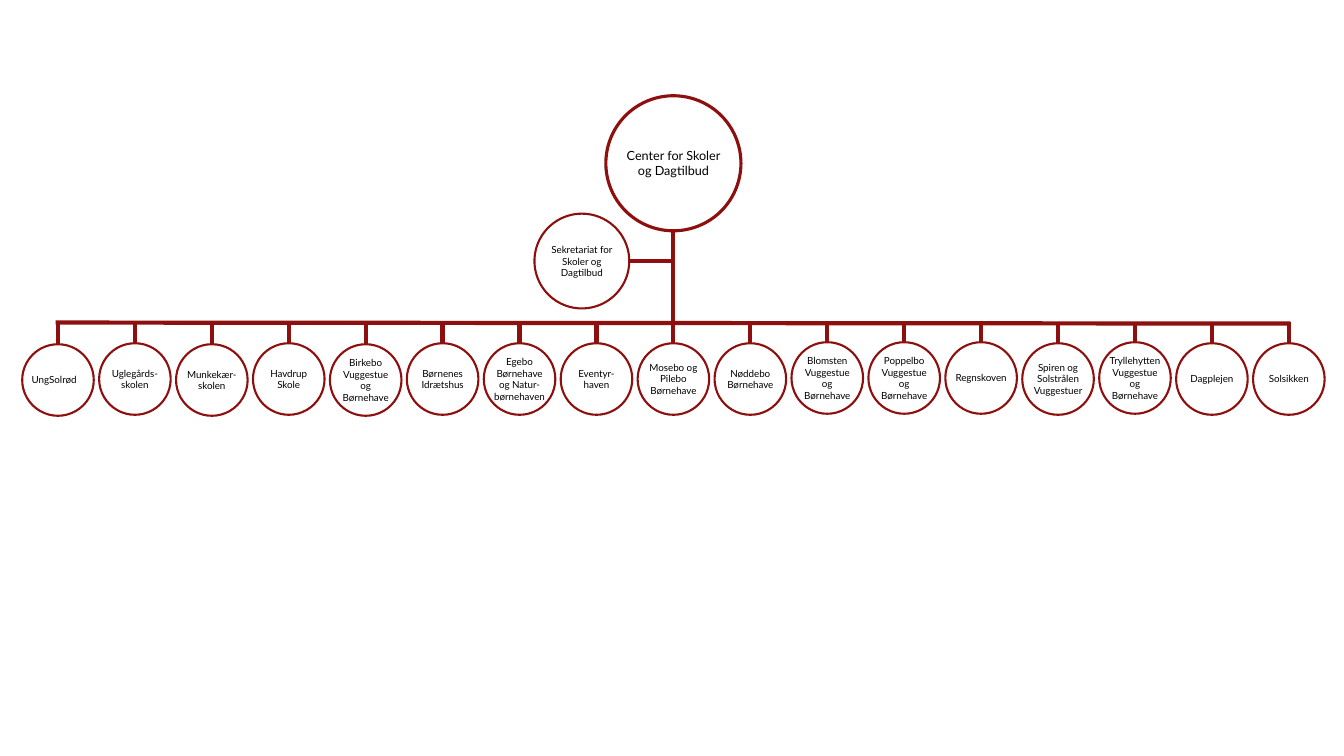
from lxml import etree
from pptx import Presentation
from pptx import util as u
from pptx.dml.color import RGBColor
from pptx.enum import shapes, text
from pptx.oxml import ns

RED = RGBColor(0x8D, 0x0F, 0x0E)
WHITE = RGBColor(0xFF, 0xFF, 0xFF)
BLACK = RGBColor(0x00, 0x00, 0x00)

CENTER_COLUMN = 8
SECRETARIAT_COLUMN = 6.81
SECRETARIAT_ROW = 25.9
BUS_ROW = 32
STEM_TOP_ROW = 31.9
UNIT_SIZE = 7.1

# name, centre row, lines of text
UNITS = [
    ("UngSolrød", 37.7, 1),
    ("Uglegårds-skolen", 37.6, 2),
    ("Munkekær-skolen", 37.7, 2),
    ("Havdrup Skole", 37.6, 2),
    ("Birkebo Vuggestue og Børnehave", 37.7, 4),
    ("Børnenes Idrætshus", 37.6, 2),
    ("Egebo Børnehave og Natur-børnehaven", 37.6, 4),
    ("Eventyr-haven", 37.6, 2),
    ("Mosebo og Pilebo Børnehave", 37.6, 3),
    ("Nøddebo Børnehave", 37.6, 2),
    ("Blomsten Vuggestue og Børnehave", 37.5, 4),
    ("Poppelbo Vuggestue og Børnehave", 37.5, 4),
    ("Regnskoven", 37.5, 1),
    ("Spiren og Solstrålen Vuggestuer", 37.6, 3),
    ("Tryllehytten Vuggestue og Børnehave", 37.5, 4),
    ("Dagplejen", 37.6, 1),
    ("Solsikken", 37.6, 1),
]


class Chart:
    """Draws organisation chart elements on a grid of columns and rows."""

    font = "Lato"
    first_column = u.Inches(0.575)
    column = u.Inches(0.763)
    row = u.Inches(0.1)

    def __init__(self, slide):
        self.slide = slide

    def x(self, column):
        return round(self.first_column + column * self.column)

    def y(self, row):
        return round(row * self.row)

    def line(self, start, end):
        connector = self.slide.shapes.add_connector(
            shapes.MSO_CONNECTOR.STRAIGHT,
            self.x(start[0]), self.y(start[1]), self.x(end[0]), self.y(end[1]))
        connector.line.color.rgb = RED
        connector.line.width = u.Pt(3)
        etree.SubElement(connector._element.spPr, ns.qn("a:effectLst"))

    def circle(self, column, row, size, weight=1.5):
        side = self.y(size)
        shape = self.slide.shapes.add_shape(
            shapes.MSO_SHAPE.OVAL,
            self.x(column) - side // 2, self.y(row) - side // 2, side, side)
        shape.shadow.inherit = False
        shape.fill.solid()
        shape.fill.fore_color.rgb = WHITE
        shape.line.color.rgb = RED
        shape.line.width = u.Pt(weight)

    def label(self, column, row, words, lines, columns=0.74, size=7):
        width = round(columns * self.column)
        height = u.Pt(lines * size * 1.2)
        box = self.slide.shapes.add_textbox(
            self.x(column) - width // 2, self.y(row) - height // 2, width, height)
        frame = box.text_frame
        frame.word_wrap = True
        frame.vertical_anchor = text.MSO_ANCHOR.MIDDLE
        frame.margin_left = frame.margin_right = 0
        frame.margin_top = frame.margin_bottom = 0
        paragraph = frame.paragraphs[0]
        paragraph.alignment = text.PP_ALIGN.CENTER
        run = paragraph.add_run()
        run.text = words
        run.font.name = self.font
        run.font.size = u.Pt(size)
        run.font.color.rgb = BLACK


def main():
    presentation = Presentation()
    presentation.slide_width = u.Inches(13.33)
    presentation.slide_height = u.Inches(7.5)
    chart = Chart(presentation.slides.add_slide(presentation.slide_layouts[6]))

    chart.line((7.43, SECRETARIAT_ROW), (CENTER_COLUMN, SECRETARIAT_ROW))
    chart.circle(SECRETARIAT_COLUMN, SECRETARIAT_ROW, 9.4)
    chart.label(SECRETARIAT_COLUMN, SECRETARIAT_ROW,
                "Sekretariat for Skoler og Dagtilbud", 3, 0.88)

    chart.line((CENTER_COLUMN, 9.5), (CENTER_COLUMN, BUS_ROW))
    chart.circle(CENTER_COLUMN, 16.2, 13.4, 2.25)
    chart.label(CENTER_COLUMN, 16.2, "Center for Skoler og Dagtilbud", 2, 1.42, 9)

    chart.line((-0.03, BUS_ROW), (16.02, BUS_ROW + 0.1))
    for column, (name, row, lines) in enumerate(UNITS):
        chart.line((column, STEM_TOP_ROW), (column, row + UNIT_SIZE / 2))
        chart.circle(column, row, UNIT_SIZE)
        nudge = -0.05 if column == 0 else 0
        chart.label(column + nudge, row, name, lines)

    presentation.save("out.pptx")


if __name__ == "__main__":
    main()
